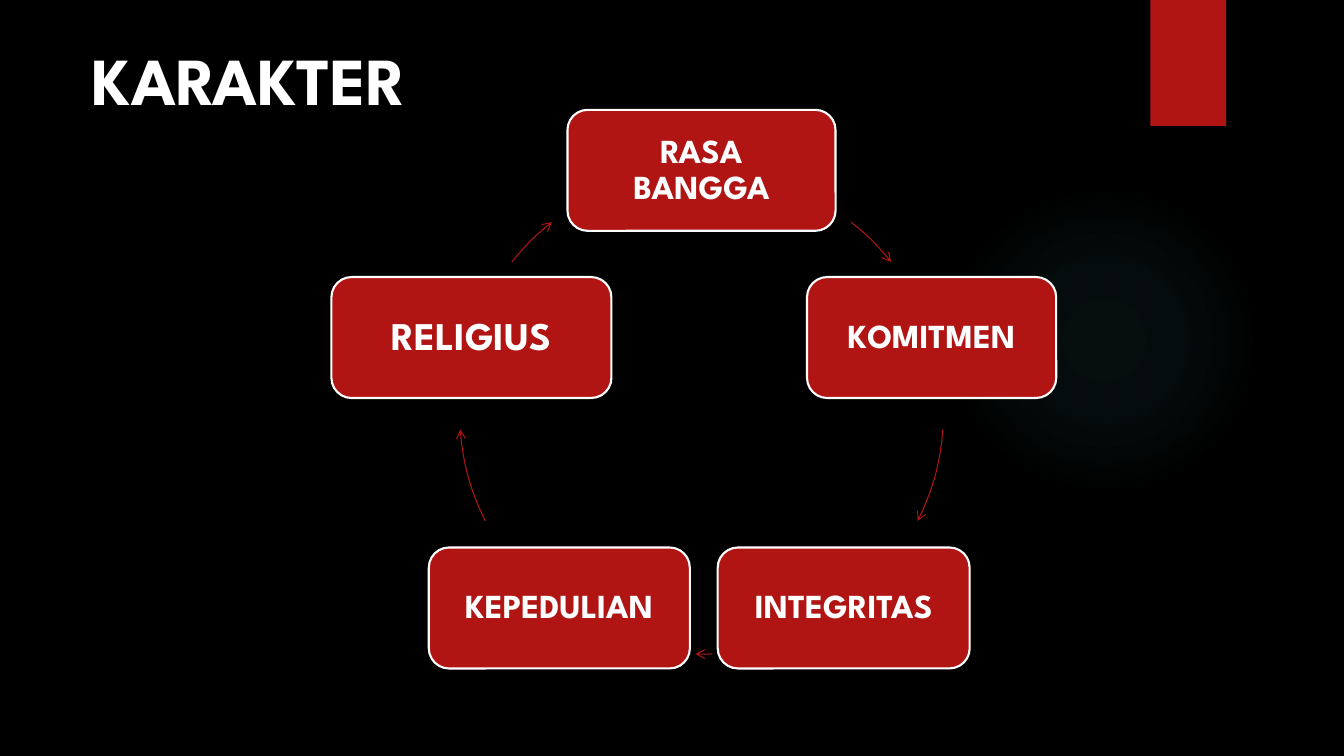
import math

import pptx
import pptx.dml.color
import pptx.enum.shapes
import pptx.enum.text
import pptx.oxml
import pptx.oxml.ns
import pptx.util

Pt = pptx.util.Pt
RGBColor = pptx.dml.color.RGBColor
SHAPE = pptx.enum.shapes.MSO_SHAPE

BLACK = RGBColor(0x00, 0x00, 0x00)
WHITE = RGBColor(0xFF, 0xFF, 0xFF)
RED = RGBColor(0xB0, 0x15, 0x13)
TEAL = RGBColor(0x50, 0xB9, 0xC1)

FONT = "League Spartan"
CENTER_X, CENTER_Y, RADIUS = 501.1, 294.5, 172.8
BOX_HEIGHT = 86.4

# Label, box width, text size; clockwise from the top
TRAITS = [
    ("RASA BANGGA", 191.5, 24),
    ("KOMITMEN", 178, 24),
    ("INTEGRITAS", 180, 24),
    ("KEPEDULIAN", 186.5, 24),
    ("RELIGIUS", 200, 28),
]
# Start and end angle in degrees, clockwise from the right
ARROWS = [(308.2, 321.6), (4.1, 26.7), (87.4, 91.4), (153.3, 175.9), (218.4, 231.8)]


class SlideBuilder:
    def __init__(self, slide):
        self.slide = slide
        slide.background.fill.solid()
        slide.background.fill.fore_color.rgb = BLACK

    def add_shape(self, kind, left, top, width, height, fill=None):
        shape = self.slide.shapes.add_shape(kind, Pt(left), Pt(top), Pt(width), Pt(height))
        shape.shadow.inherit = False
        shape.line.fill.background()
        if fill is None:
            shape.fill.background()
        else:
            shape.fill.solid()
            shape.fill.fore_color.rgb = fill
        return shape

    def add_glow(self, left, top, diameter, color, stops):
        """Circle with a radial gradient; stops are (position, opacity) in percent."""
        glow = self.add_shape(SHAPE.OVAL, left, top, diameter, diameter)
        stop_xml = "".join(
            f'<a:gs pos="{position * 1000}"><a:srgbClr val="{color}">'
            f'<a:alpha val="{opacity * 1000}"/></a:srgbClr></a:gs>'
            for position, opacity in stops
        )
        gradient = pptx.oxml.parse_xml(
            f'<a:gradFill {pptx.oxml.ns.nsdecls("a")}><a:gsLst>{stop_xml}</a:gsLst>'
            '<a:path path="circle"><a:fillToRect l="50000" t="50000" r="50000" b="50000"/>'
            "</a:path></a:gradFill>"
        )
        properties = glow._element.spPr
        properties.replace(properties.find(pptx.oxml.ns.qn("a:noFill")), gradient)

    def set_text(self, paragraph, text, size):
        paragraph.text = text
        font = paragraph.font
        font.name, font.size, font.bold = FONT, Pt(size), True
        font.color.rgb = WHITE

    def add_title(self, text, left, top, width, height):
        box = self.slide.shapes.add_textbox(Pt(left), Pt(top), Pt(width), Pt(height))
        box.text_frame.word_wrap = False
        box.text_frame.auto_size = pptx.enum.text.MSO_AUTO_SIZE.SHAPE_TO_FIT_TEXT
        self.set_text(box.text_frame.paragraphs[0], text, 48)

    def add_trait(self, text, center_x, center_y, width, size):
        box = self.add_shape(SHAPE.ROUNDED_RECTANGLE, center_x - width / 2,
                             center_y - BOX_HEIGHT / 2, width, BOX_HEIGHT, RED)
        box.line.color.rgb = WHITE
        box.line.width = Pt(1.5)
        frame = box.text_frame
        frame.word_wrap = True
        frame.vertical_anchor = pptx.enum.text.MSO_ANCHOR.MIDDLE
        frame.margin_left = frame.margin_right = Pt(11)
        frame.margin_top = frame.margin_bottom = Pt(11)
        paragraph = frame.paragraphs[0]
        paragraph.alignment = pptx.enum.text.PP_ALIGN.CENTER
        paragraph.line_spacing = 0.9
        self.set_text(paragraph, text, size)

    def add_arc_arrow(self, start, end):
        arc = self.add_shape(SHAPE.ARC, CENTER_X - RADIUS, CENTER_Y - RADIUS,
                             2 * RADIUS, 2 * RADIUS)
        # Angles are stored in 1/60000 degree, adjustments in 1/100000
        arc.adjustments[0] = start * 0.6
        arc.adjustments[1] = end * 0.6
        arc.line.color.rgb = RED
        arc.line.width = Pt(0.75)
        arc.line._get_or_add_ln().append(pptx.oxml.parse_xml(
            f'<a:tailEnd {pptx.oxml.ns.nsdecls("a")} type="arrow"/>'))


def main():
    presentation = pptx.Presentation()
    presentation.slide_width, presentation.slide_height = Pt(960), Pt(540)
    builder = SlideBuilder(presentation.slides.add_slide(presentation.slide_layouts[6]))

    builder.add_glow(677.5, 131.8, 221.8, TEAL, [(0, 7), (36, 6), (69, 0)])
    builder.add_shape(SHAPE.RECTANGLE, 821.8, 0, 54, 90, RED)

    for index, (label, width, size) in enumerate(TRAITS):
        angle = math.radians(index * 360 / len(TRAITS) - 90)
        builder.add_trait(label, CENTER_X + RADIUS * math.cos(angle),
                          CENTER_Y + RADIUS * math.sin(angle), width, size)
    for start, end in ARROWS:
        builder.add_arc_arrow(start, end)

    builder.add_title("KARAKTER", 59, 23.8, 249, 65.5)
    presentation.save("out.pptx")


if __name__ == "__main__":
    main()
